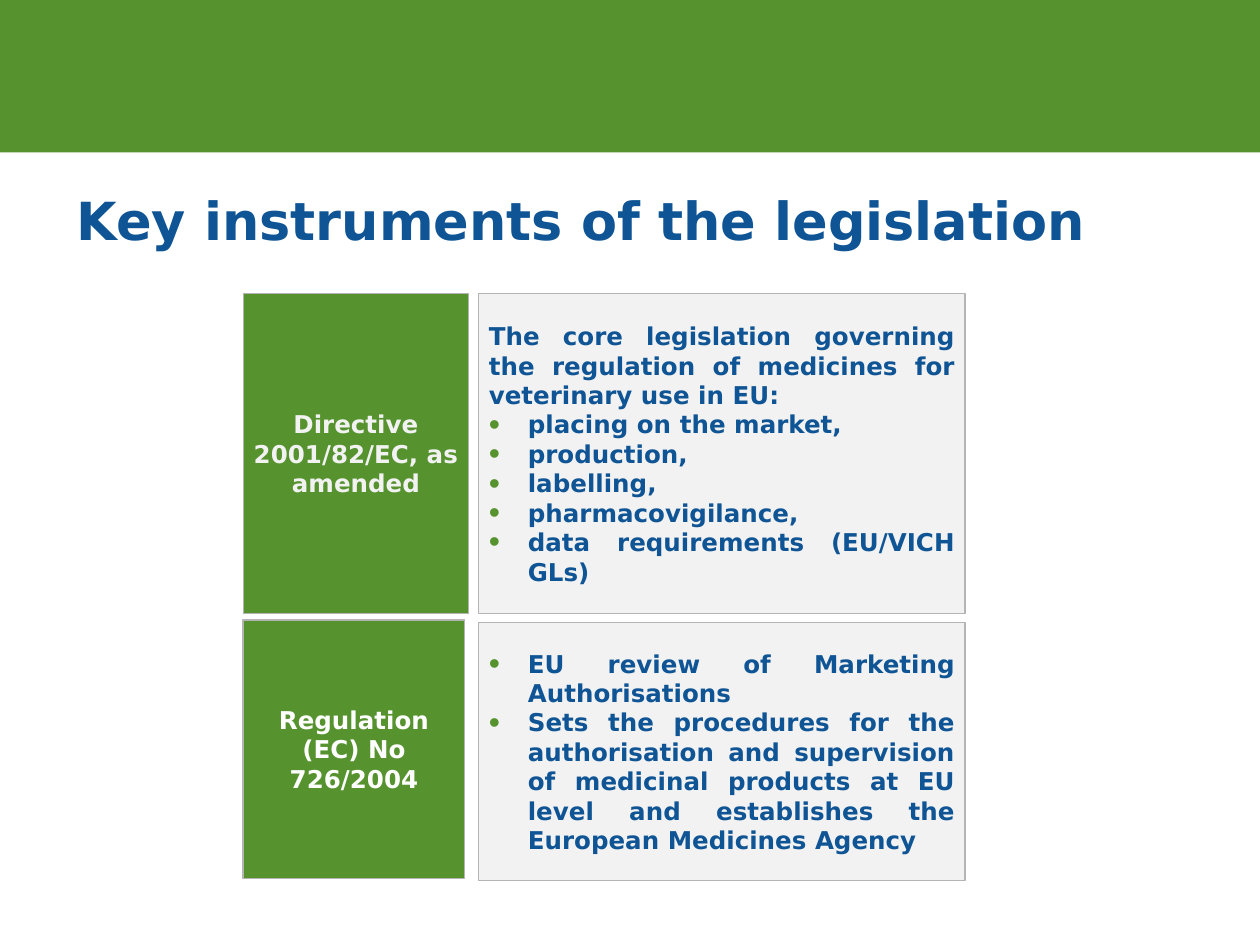
from lxml.etree import SubElement
from pptx import Presentation
from pptx.dml.color import RGBColor
from pptx.enum.shapes import MSO_SHAPE as Preset
from pptx.enum.text import MSO_ANCHOR as Anchor, PP_ALIGN as Align
from pptx.oxml.ns import qn
from pptx.util import Inches, Pt

FONT = "DejaVu Sans"
COLORS = {
    "green": "56932F",
    "blue": "0F5494",
    "pale": "F2F2F2",
    "white": "FFFFFF",
    "border": "B4B4B4",
}
# Column and row positions in inches: (start, length)
LABEL_LEFT = 1.93
DETAIL_COLUMN = (3.8, 3.86)
DIRECTIVE_ROW = (2.33, 2.54)
REGULATION_ROW = (4.92, 2.05)
REGULATION_DETAIL_ROW = (4.94, 2.05)


def color(name):
    return RGBColor.from_string(COLORS[name])


def add_rectangle(slide, column, row, fill, line=None):
    (left, width), (top, height) = column, row
    shape = slide.shapes.add_shape(
        Preset.RECTANGLE, Inches(left), Inches(top), Inches(width), Inches(height))
    shape.shadow.inherit = False
    shape.fill.solid()
    shape.fill.fore_color.rgb = color(fill)
    if line:
        shape.line.color.rgb = color(line)
        shape.line.width = Pt(0.75)
    else:
        shape.line.fill.background()
    return shape


def prepare_frame(shape, inset):
    frame = shape.text_frame
    frame.word_wrap = True
    frame.vertical_anchor = Anchor.MIDDLE
    frame.margin_left = frame.margin_right = Inches(inset)
    frame.margin_top = frame.margin_bottom = Inches(inset)
    return frame


def add_run(paragraph, text, size, text_color):
    run = paragraph.add_run()
    run.text = text
    run.font.name = FONT
    run.font.size = Pt(size)
    run.font.bold = True
    run.font.color.rgb = color(text_color)


def add_bullet(paragraph):
    """Give the paragraph a hanging indent and a large green bullet."""
    properties = paragraph._p.get_or_add_pPr()
    properties.set("marL", str(Inches(0.31)))
    properties.set("indent", str(-Inches(0.31)))
    bullet_color = SubElement(properties, qn("a:buClr"))
    SubElement(bullet_color, qn("a:srgbClr"), val=COLORS["green"])
    SubElement(properties, qn("a:buSzPct"), val="130000")
    SubElement(properties, qn("a:buFont"), typeface="Arial")
    SubElement(properties, qn("a:buChar"), char="•")


def add_title(slide, text):
    box = slide.shapes.add_textbox(Inches(0.51), Inches(1.23), Inches(9), Inches(1.02))
    frame = prepare_frame(box, 0.1)
    add_run(frame.paragraphs[0], text, 30, "blue")


def add_label(slide, width, row, text, text_color):
    shape = add_rectangle(slide, (LABEL_LEFT, width), row, "green", "border")
    paragraph = prepare_frame(shape, 0.08).paragraphs[0]
    paragraph.alignment = Align.CENTER
    add_run(paragraph, text, 14, text_color)


def add_details(slide, row, bullets, intro=None):
    """Add a pale box with an optional plain paragraph above its bullets."""
    shape = add_rectangle(slide, DETAIL_COLUMN, row, "pale", "border")
    frame = prepare_frame(shape, 0.08)
    texts = ([intro] if intro else []) + bullets
    for index, text in enumerate(texts):
        paragraph = frame.add_paragraph() if index else frame.paragraphs[0]
        paragraph.alignment = Align.JUSTIFY
        if text != intro:
            add_bullet(paragraph)
        add_run(paragraph, text, 14, "blue")


def main():
    presentation = Presentation()
    presentation.slide_width = Inches(10)
    presentation.slide_height = Inches(7.5)
    slide = presentation.slides.add_slide(presentation.slide_layouts[6])

    add_rectangle(slide, (0, 10), (-0.03, 1.24), "green")
    add_title(slide, "Key instruments of the legislation")

    add_label(slide, 1.79, DIRECTIVE_ROW, "Directive 2001/82/EC, as amended", "pale")
    add_details(
        slide, DIRECTIVE_ROW,
        ["placing on the market,", "production,", "labelling,",
         "pharmacovigilance,", "data requirements (EU/VICH GLs)"],
        intro="The core legislation governing the regulation of medicines "
              "for veterinary use in EU:")

    add_label(slide, 1.76, REGULATION_ROW, "Regulation (EC) No 726/2004", "white")
    add_details(
        slide, REGULATION_DETAIL_ROW,
        ["EU review of Marketing Authorisations",
         "Sets the procedures for the authorisation and supervision of medicinal "
         "products at EU level and establishes the European Medicines Agency"])

    presentation.save("out.pptx")


if __name__ == "__main__":
    main()
